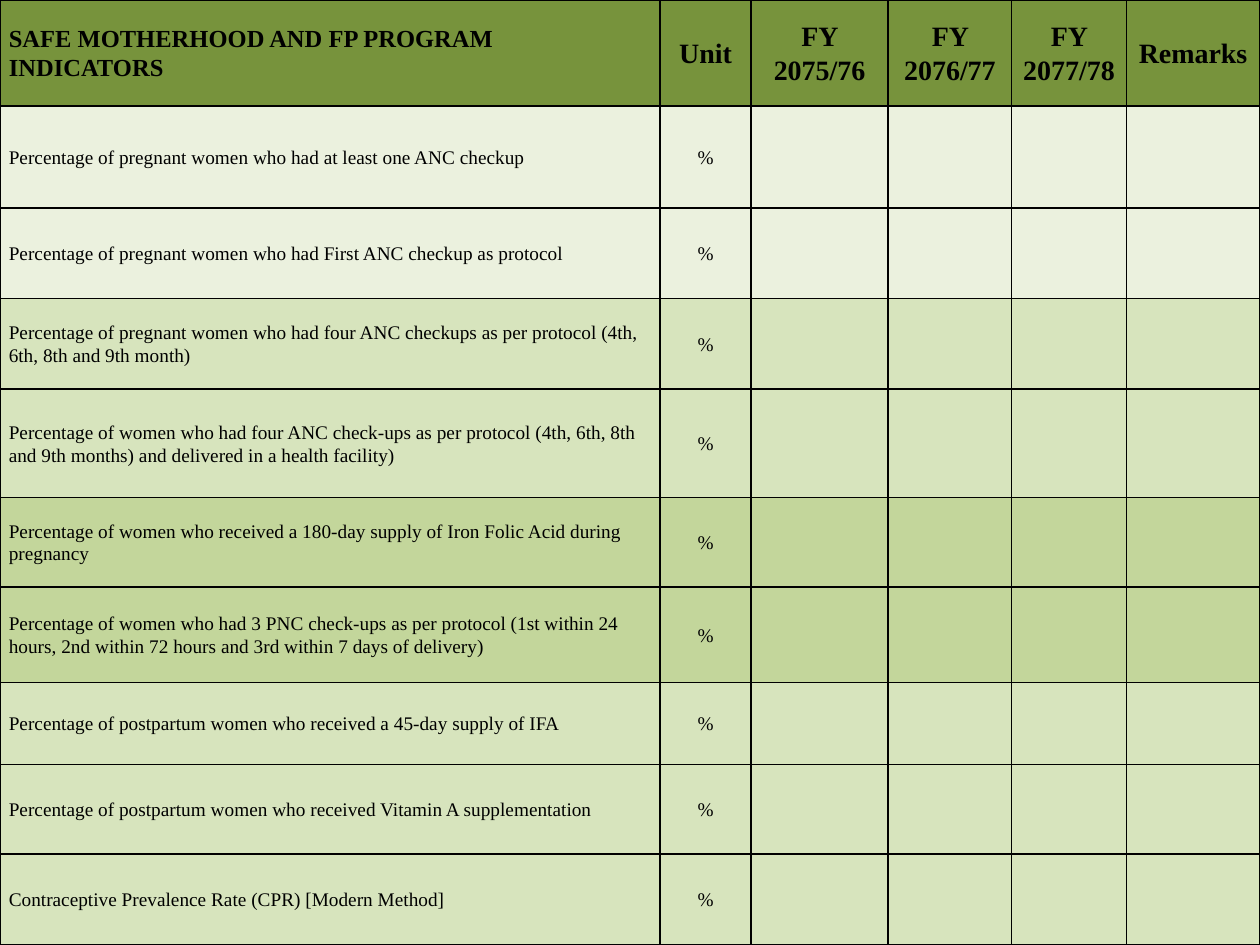
from dataclasses import dataclass

from lxml.etree import SubElement
from pptx import Presentation
from pptx.dml.color import RGBColor
from pptx.enum.text import MSO_ANCHOR, PP_ALIGN
from pptx.oxml.ns import qn
from pptx.util import Inches, Pt


@dataclass(frozen=True)
class Theme:
    font: str = "Times New Roman"
    ink: str = "000000"
    header: str = "77933C"
    pale: str = "EBF1DE"
    light: str = "D7E4BD"
    medium: str = "C3D69B"
    title_size: int = 14
    heading_size: int = 16
    body_size: int = 11
    border_width: int = 1


THEME = Theme()

COLUMN_WIDTHS = [5.24, 0.72, 1.09, 0.98, 0.91, 1.06]
ROW_HEIGHTS = [0.84, 0.81, 0.72, 0.72, 0.86, 0.71, 0.76, 0.65, 0.71, 0.72]

HEADINGS = ["SAFE MOTHERHOOD AND FP PROGRAM INDICATORS", "Unit",
            "FY 2075/76", "FY 2076/77", "FY 2077/78", "Remarks"]

# Indicators grouped by the shade of their rows
INDICATOR_GROUPS = [
    (THEME.pale, [
        "Percentage of pregnant women who had at least one ANC checkup",
        "Percentage of pregnant women who had First ANC checkup as protocol",
    ]),
    (THEME.light, [
        "Percentage of pregnant women who had four ANC checkups as per protocol "
        "(4th, 6th, 8th and 9th month)",
        "Percentage of women who had four ANC check-ups as per protocol "
        "(4th, 6th, 8th and 9th months) and delivered in a health facility)",
    ]),
    (THEME.medium, [
        "Percentage of women who received a 180-day supply of Iron Folic Acid "
        "during pregnancy",
        "Percentage of women who had 3 PNC check-ups as per protocol "
        "(1st within 24 hours, 2nd within 72 hours and 3rd within 7 days of delivery)",
    ]),
    (THEME.light, [
        "Percentage of postpartum women who received a 45-day supply of IFA",
        "Percentage of postpartum women who received Vitamin A supplementation",
        "Contraceptive Prevalence Rate (CPR) [Modern Method]",
    ]),
]


def set_borders(cell):
    """Draw a solid line on each side; borders come before the fill in tcPr."""
    tc_pr = cell._tc.get_or_add_tcPr()
    for side in ("a:lnL", "a:lnR", "a:lnT", "a:lnB"):
        line = SubElement(tc_pr, qn(side), w=str(Pt(THEME.border_width)))
        fill = SubElement(line, qn("a:solidFill"))
        SubElement(fill, qn("a:srgbClr"), val=THEME.ink)


def write_text(cell, text, size, bold, align):
    p = cell.text_frame.paragraphs[0]
    p.alignment = align
    p.line_spacing = 1.07
    r = p.add_run()
    r.text = text
    for name, value in {"name": THEME.font, "size": Pt(size), "bold": bold}.items():
        setattr(r.font, name, value)
    r.font.color.rgb = RGBColor.from_string(THEME.ink)


def format_cell(cell, color):
    layout = {"vertical_anchor": MSO_ANCHOR.MIDDLE,
              "margin_left": Inches(0.07), "margin_right": Inches(0.07),
              "margin_top": 0, "margin_bottom": 0}
    for name, value in layout.items():
        setattr(cell, name, value)
    set_borders(cell)
    cell.fill.solid()
    cell.fill.fore_color.rgb = RGBColor.from_string(color)


def fill_row(table, row, texts, color, sizes, bold=False):
    """Fill one row; sizes holds the first column's size and the others' size."""
    for col, text in enumerate(texts):
        cell = table.cell(row, col)
        format_cell(cell, color)
        if text:
            align = PP_ALIGN.CENTER if col else PP_ALIGN.LEFT
            write_text(cell, text, sizes[min(col, 1)], bold, align)


def add_grid(s):
    table = s.shapes.add_table(len(ROW_HEIGHTS), len(COLUMN_WIDTHS), 0, 0,
                               Inches(10), Inches(7.5)).table
    for column, width in zip(table.columns, COLUMN_WIDTHS):
        column.width = Inches(width)
    for row, height in zip(table.rows, ROW_HEIGHTS):
        row.height = Inches(height)
    return table


def main():
    prs = Presentation()
    prs.slide_width, prs.slide_height = Inches(10), Inches(7.5)
    s = prs.slides.add_slide(prs.slide_layouts[6])
    table = add_grid(s)

    # Header row
    fill_row(table, 0, HEADINGS, THEME.header,
             (THEME.title_size, THEME.heading_size), bold=True)

    # Indicator rows, with years and remarks left open
    rows = [(color, text) for color, group in INDICATOR_GROUPS for text in group]
    for row, (color, text) in enumerate(rows, start=1):
        fill_row(table, row, [text, "%", "", "", "", ""], color,
                 (THEME.body_size, THEME.body_size))

    prs.save("out.pptx")


if __name__ == "__main__":
    main()
